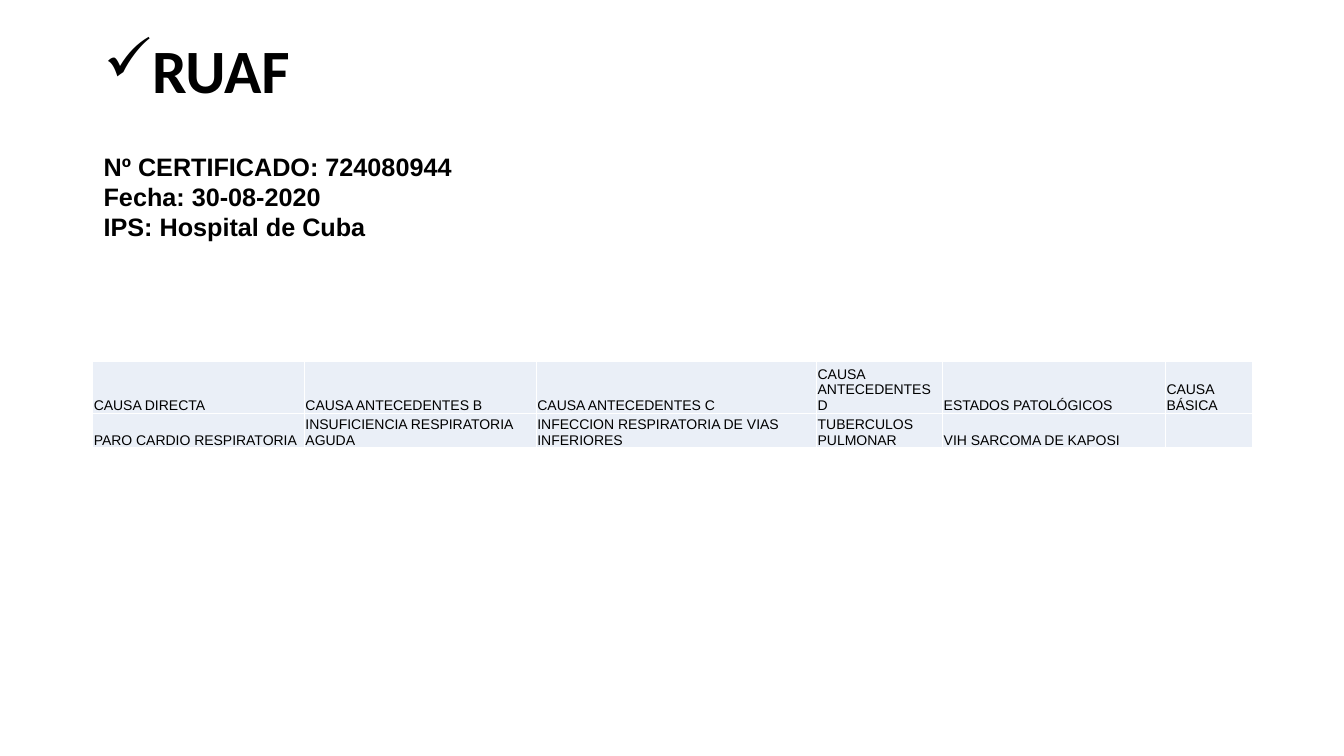
import pptx
import pptx.util
import pptx.dml.color
import pptx.enum.text
import pptx.oxml
import pptx.oxml.ns

BLACK = pptx.dml.color.RGBColor(0x00, 0x00, 0x00)
WHITE = pptx.dml.color.RGBColor(0xFF, 0xFF, 0xFF)
PALE_BLUE = pptx.dml.color.RGBColor(0xEA, 0xEF, 0xF7)

ANCHOR = pptx.enum.text.MSO_ANCHOR
NS = pptx.oxml.ns.nsdecls("a")

CERTIFICATE = [
    "Nº CERTIFICADO: 724080944",
    "Fecha: 30-08-2020",
    "IPS: Hospital de Cuba",
]
COLUMN_WIDTHS = [210, 230, 278, 125, 221, 86]
CAUSES = [
    ["CAUSA DIRECTA", "CAUSA ANTECEDENTES B", "CAUSA ANTECEDENTES C",
     "CAUSA ANTECEDENTES D", "ESTADOS PATOLÓGICOS", "CAUSA BÁSICA"],
    ["PARO CARDIO RESPIRATORIA", "INSUFICIENCIA RESPIRATORIA AGUDA",
     "INFECCION RESPIRATORIA DE VIAS INFERIORES", "TUBERCULOS PULMONAR",
     "VIH SARCOMA DE KAPOSI", ""],
]


def px(n):
    """Turn px (100 to the inch) into EMU."""
    return pptx.util.Emu(n * 9144)


def write(p, text, font="Arial", size=18, bold=False, color=BLACK):
    r = p.add_run()
    r.text = text
    r.font.name = font
    r.font.size = pptx.util.Pt(size)
    r.font.bold = bold
    r.font.color.rgb = color


class Slide:
    def __init__(self, prs):
        self.s = prs.slides.add_slide(prs.slide_layouts[6])
        self.s.background.fill.solid()
        self.s.background.fill.fore_color.rgb = WHITE

    def text(self, x, y, w, h, lines, anchor=ANCHOR.TOP, **style):
        tf = self.s.shapes.add_textbox(px(x), px(y), px(w), px(h)).text_frame
        tf.word_wrap = True
        tf.vertical_anchor = anchor
        for i, line in enumerate(lines):
            p = tf.add_paragraph() if i else tf.paragraphs[0]
            write(p, line, **style)
        return tf

    def title(self, x, y, w, h, text, bullet, indent):
        tf = self.text(x, y, w, h, [text], ANCHOR.MIDDLE,
                       font="Calibri", size=44, bold=True)
        p = tf.paragraphs[0]
        p.line_spacing = 0.9
        pPr = p._p.get_or_add_pPr()
        pPr.set("marL", str(px(indent)))
        pPr.set("indent", str(px(-indent)))
        pPr.append(pptx.oxml.parse_xml(f'<a:buChar {NS} char="{bullet}"/>'))

    def table(self, x, y, widths, row_height, rows, **style):
        tbl = self.s.shapes.add_table(
            len(rows), len(widths), px(x), px(y),
            px(sum(widths)), px(row_height * len(rows))).table
        tbl.first_row = tbl.horz_banding = False
        for column, width in zip(tbl.columns, widths):
            column.width = px(width)
        for i, row in enumerate(rows):
            tbl.rows[i].height = px(row_height)
            for j, text in enumerate(row):
                self.cell(tbl.cell(i, j), text, **style)

    def cell(self, cell, text, **style):
        cell.margin_left = cell.margin_right = cell.margin_top = px(1)
        cell.margin_bottom = 0
        cell.vertical_anchor = ANCHOR.BOTTOM
        write(cell.text_frame.paragraphs[0], text, **style)
        tcPr = cell._tc.get_or_add_tcPr()
        for side in ("lnL", "lnR", "lnT", "lnB"):
            tcPr.append(pptx.oxml.parse_xml(
                f'<a:{side} {NS} w="{pptx.util.Pt(1)}"><a:solidFill>'
                f'<a:srgbClr val="{WHITE}"/></a:solidFill></a:{side}>'))
        cell.fill.solid()
        cell.fill.fore_color.rgb = PALE_BLUE


def main():
    prs = pptx.Presentation()
    prs.slide_width, prs.slide_height = px(1333), px(750)
    s = Slide(prs)
    s.title(93, 0, 1150, 145, "RUAF", bullet="✓", indent=31)
    s.text(93, 145, 950, 101, CERTIFICATE, bold=True)
    s.table(92, 359, COLUMN_WIDTHS, 33, CAUSES, size=10)
    prs.save("out.pptx")


if __name__ == "__main__":
    main()
